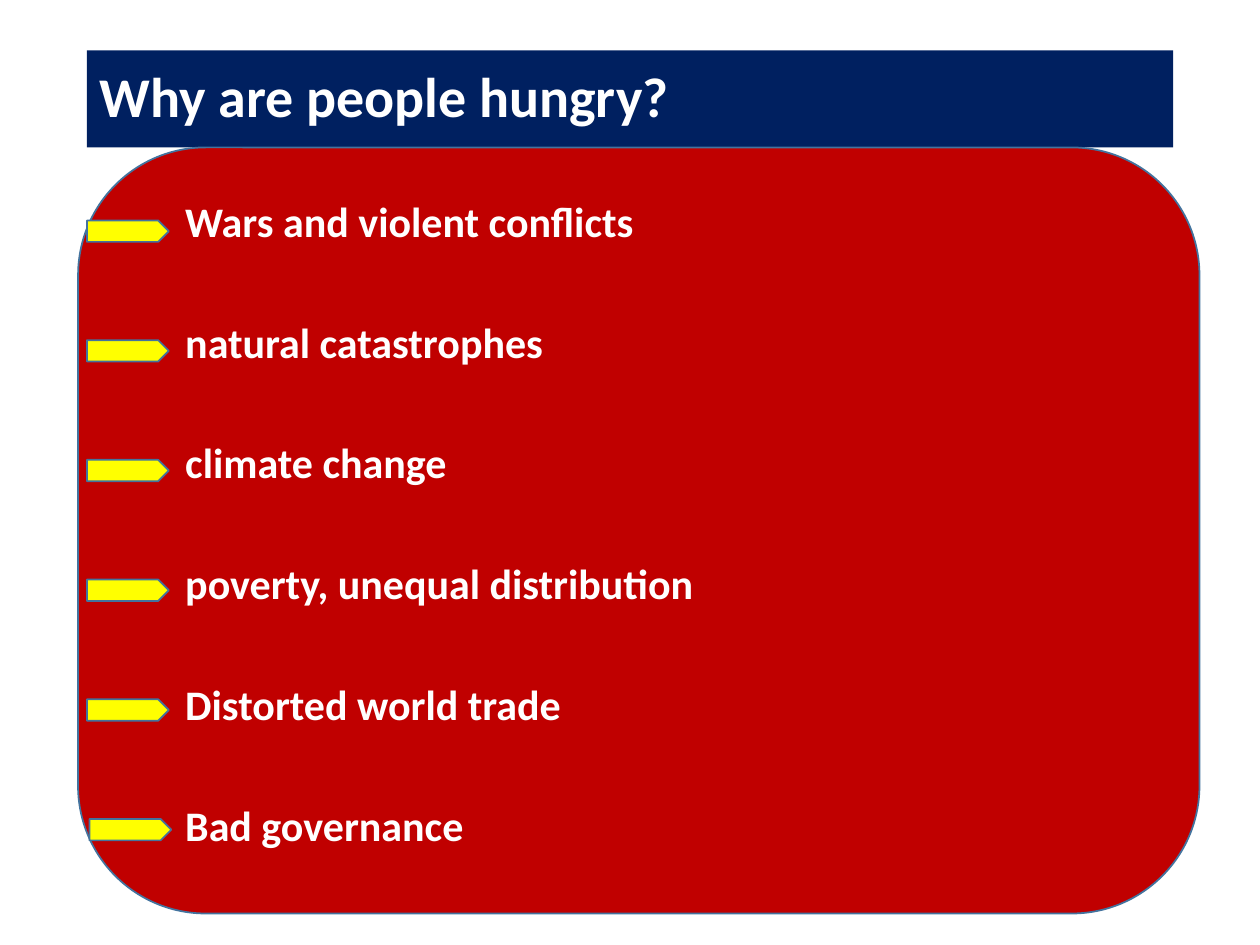
from pptx import Presentation
from pptx.dml.color import RGBColor
from pptx.enum import shapes, text
from pptx.util import Inches, Pt

COLORS = {
    "navy": "002060",
    "red": "C00000",
    "yellow": "FFFF00",
    "outline": "43739E",
    "white": "FFFFFF",
}
FONT = "Calibri"
CAUSES = [
    "Wars and violent conflicts",
    "natural catastrophes",
    "climate change",
    "poverty, unequal distribution",
    "Distorted world trade",
    "Bad governance",
]


def color(name):
    return RGBColor.from_string(COLORS[name])


def set_text(p, content, size, before=0, line_spacing=1.0):
    p.alignment = text.PP_ALIGN.LEFT
    p.space_before = Pt(before)
    p.line_spacing = line_spacing
    r = p.add_run()
    r.text = content
    r.font.name = FONT
    r.font.size = Pt(size)
    r.font.bold = True
    r.font.color.rgb = color("white")


def add_title(s, content):
    sp = s.shapes.title
    sp.left, sp.top = Inches(0.69), Inches(0.4)
    sp.width, sp.height = Inches(8.62), Inches(0.77)
    sp.fill.solid()
    sp.fill.fore_color.rgb = color("navy")
    tf = sp.text_frame
    tf.vertical_anchor = text.MSO_ANCHOR.MIDDLE
    set_text(tf.paragraphs[0], content, 32, line_spacing=0.9)


def add_box(s, kind, left, top, width, height, fill):
    sp = s.shapes.add_shape(kind, Inches(left), Inches(top), Inches(width), Inches(height))
    sp.shadow.inherit = False
    sp.fill.solid()
    sp.fill.fore_color.rgb = color(fill)
    sp.line.color.rgb = color("outline")
    sp.line.width = Pt(1)


def add_causes(s, causes):
    sp = s.shapes.add_textbox(Inches(0.62), Inches(1.5), Inches(8.75), Inches(5.58))
    tf = sp.text_frame
    tf.word_wrap = True
    tf.margin_left = Inches(0.85)
    for i, cause in enumerate(causes):
        p = tf.paragraphs[0] if i == 0 else tf.add_paragraph()
        set_text(p, cause, 24, before=40.3 if i else 6)


def main():
    prs = Presentation()
    prs.slide_width, prs.slide_height = Inches(10), Inches(7.5)
    s = prs.slides.add_slide(prs.slide_layouts[5])
    add_title(s, "Why are people hungry?")
    add_box(s, shapes.MSO_SHAPE.ROUNDED_RECTANGLE, 0.62, 1.17, 8.9, 6.08, "red")
    add_causes(s, CAUSES)
    for i in range(len(CAUSES)):
        left = 0.71 if i == len(CAUSES) - 1 else 0.69
        add_box(s, shapes.MSO_SHAPE.PENTAGON, left, 1.75 + 0.95 * i, 0.65, 0.17, "yellow")
    prs.save("out.pptx")


if __name__ == "__main__":
    main()
